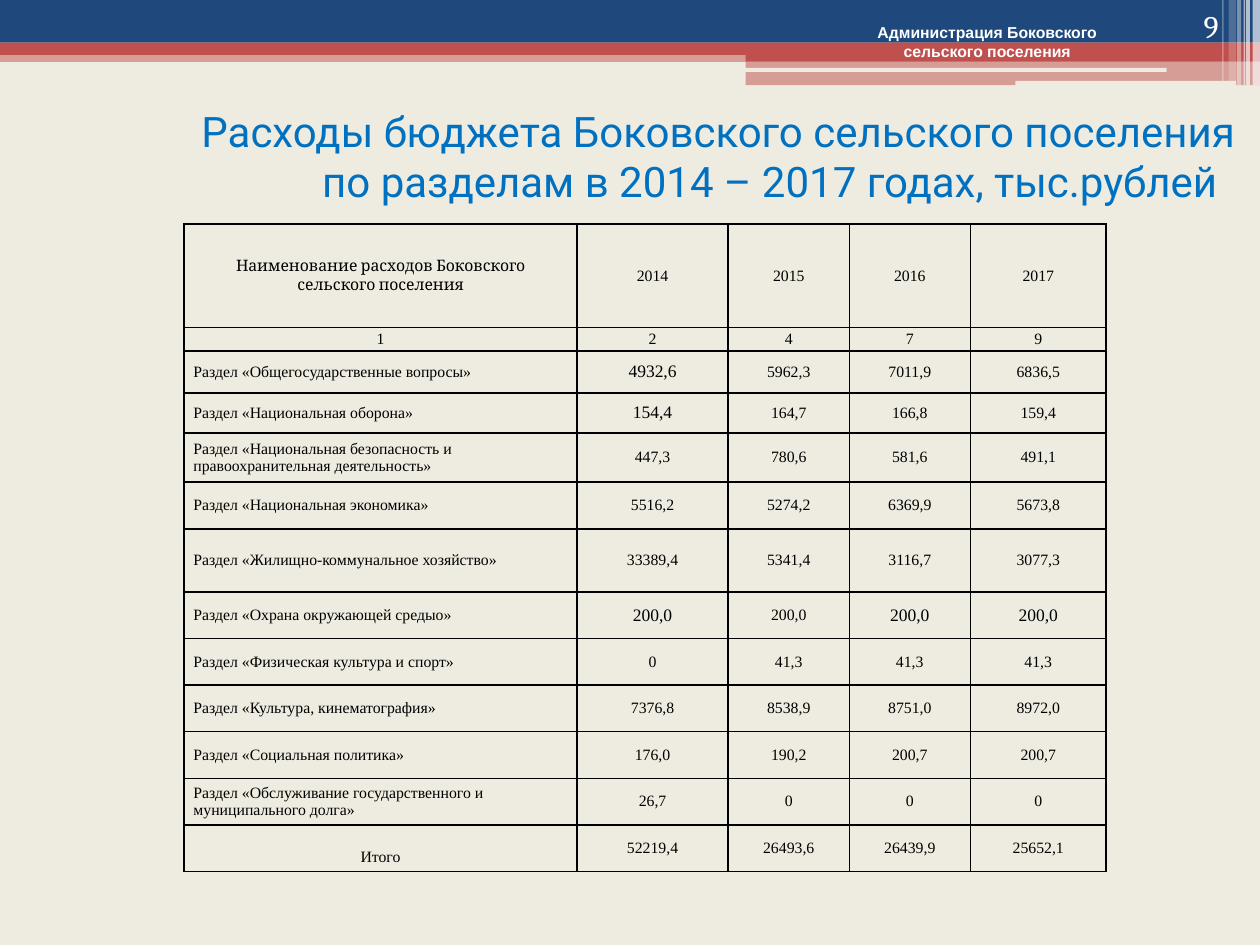
from typing import NamedTuple

from lxml.etree import SubElement
from pptx import Presentation
from pptx.dml.color import RGBColor
from pptx.enum.shapes import MSO_SHAPE
from pptx.enum.text import MSO_ANCHOR, MSO_AUTO_SIZE, PP_ALIGN
from pptx.oxml.ns import qn
from pptx.util import Cm, Pt

NAVY = RGBColor(0x1F, 0x49, 0x7D)
RED = RGBColor(0xC0, 0x50, 0x4D)
CREAM = RGBColor(0xEE, 0xEC, 0xE1)
WHITE = RGBColor(0xFF, 0xFF, 0xFF)
BLACK = RGBColor(0, 0, 0)
BLUE = RGBColor(0x00, 0x70, 0xC0)
SERIF = "Times New Roman"


class Bar(NamedTuple):
    left: float
    top: float
    width: float
    height: float
    color: RGBColor
    alpha: int = 100
    kind: MSO_SHAPE = MSO_SHAPE.RECTANGLE


class Font(NamedTuple):
    name: str
    size: int
    color: RGBColor
    bold: bool = False


ROUND = MSO_SHAPE.ROUNDED_RECTANGLE
BARS = [
    Bar(0, 1.02, 25.4, 0.23, RED, 50),
    Bar(0, 0, 25.4, 0.86, NAVY),
    Bar(0, 0.86, 25.4, 0.25, RED),
    Bar(15.03, 0.99, 10.37, 0.25, RED),
    Bar(15.03, 1.24, 10.37, 0.48, RED, 50),
    Bar(15.01, 1.37, 8.51, 0.08, CREAM, kind=ROUND),
    Bar(20.47, 1.63, 4.45, 0.1, CREAM, kind=ROUND),
    # Pale stripes at the right edge
    Bar(25.25, 0, 0.15, 1.72, WHITE, 65),
    Bar(25.12, 0, 0.08, 1.72, WHITE, 65),
    Bar(25.07, 0, 0.03, 1.72, WHITE, 60),
    Bar(24.94, 0, 0.08, 1.72, WHITE, 40),
    Bar(24.77, 0, 0.15, 1.63, WHITE, 20),
    Bar(24.64, 0, 0.03, 1.63, WHITE, 30),
]

# Title lines with their left indents
TITLE = [
    ("Расходы бюджета Боковского сельского поселения", 3.56),
    ("по разделам в 2014 – 2017 годах, тыс.рублей", 5.64),
]

COLS = [7.92, 3.05, 2.44, 2.44, 2.74]
ROWS = [2.08, 0.48, 0.84, 0.81, 0.99, 0.94, 1.27] + [0.94] * 6
DATA = [
    ("Наименование расходов Боковского сельского поселения",
     "2014", "2015", "2016", "2017"),
    ("1", "2", "4", "7", "9"),
    ("Раздел «Общегосударственные вопросы»",
     "4932,6", "5962,3", "7011,9", "6836,5"),
    ("Раздел «Национальная оборона»", "154,4", "164,7", "166,8", "159,4"),
    ("Раздел «Национальная безопасность и правоохранительная деятельность»",
     "447,3", "780,6", "581,6", "491,1"),
    ("Раздел «Национальная экономика»",
     "5516,2", "5274,2", "6369,9", "5673,8"),
    ("Раздел «Жилищно-коммунальное хозяйство»",
     "33389,4", "5341,4", "3116,7", "3077,3"),
    ("Раздел «Охрана окружающей средыо»",
     "200,0", "200,0", "200,0", "200,0"),
    ("Раздел «Физическая культура и спорт»", "0", "41,3", "41,3", "41,3"),
    ("Раздел «Культура, кинематография»",
     "7376,8", "8538,9", "8751,0", "8972,0"),
    ("Раздел «Социальная политика»", "176,0", "190,2", "200,7", "200,7"),
    ("Раздел «Обслуживание государственного и муниципального долга»",
     "26,7", "0", "0", "0"),
    ("Итого", "52219,4", "26493,6", "26439,9", "25652,1"),
]
LAST = len(DATA) - 1
LARGE = {(2, 1), (3, 1), (7, 1), (7, 3), (7, 4)}


def add_run(para, text: str, font: Font, align=PP_ALIGN.CENTER) -> None:
    para.alignment = align
    run = para.add_run()
    run.text = text
    run.font.name = font.name
    run.font.size = Pt(font.size)
    run.font.bold = font.bold
    run.font.color.rgb = font.color


def add_bar(slide, bar: Bar) -> None:
    shape = slide.shapes.add_shape(
        bar.kind, Cm(bar.left), Cm(bar.top), Cm(bar.width), Cm(bar.height))
    shape.shadow.inherit = False
    shape.fill.solid()
    shape.fill.fore_color.rgb = bar.color
    if bar.alpha < 100:
        color = shape.element.spPr.find(".//" + qn("a:srgbClr"))
        SubElement(color, qn("a:alpha")).set("val", str(bar.alpha * 1000))
    shape.line.fill.background()


def add_title(slide) -> None:
    title = slide.shapes.title
    title.left, title.top = Cm(0), Cm(2.13)
    title.width, title.height = Cm(25.4), Cm(2.01)
    frame = title.text_frame
    frame.auto_size = MSO_AUTO_SIZE.NONE
    frame.vertical_anchor = MSO_ANCHOR.MIDDLE
    for i, (text, indent) in enumerate(TITLE):
        para = frame.add_paragraph() if i else frame.paragraphs[0]
        add_run(para, text, Font("Roboto", 24, BLUE))
        para._p.get_or_add_pPr().set("marL", str(Cm(indent)))


def add_label(slide, left: float, top: float, width: float, lines: list[str],
              font: Font, align, anchor) -> None:
    box = slide.shapes.add_textbox(Cm(left), Cm(top), Cm(width), Cm(1.02))
    frame = box.text_frame
    frame.word_wrap = True
    frame.vertical_anchor = anchor
    for i, text in enumerate(lines):
        para = frame.add_paragraph() if i else frame.paragraphs[0]
        add_run(para, text, font, align)


def style_cell(cell) -> None:
    cell.vertical_anchor = MSO_ANCHOR.MIDDLE
    cell.margin_left = cell.margin_right = Cm(0.19)
    cell.margin_top = cell.margin_bottom = Cm(0)
    props = cell._tc.get_or_add_tcPr()
    for side in ("lnL", "lnR", "lnT", "lnB"):
        line = SubElement(props, qn(f"a:{side}"), w=str(Pt(1)))
        fill = SubElement(line, qn("a:solidFill"))
        SubElement(fill, qn("a:srgbClr"), val=str(BLACK))
    cell.fill.background()


def add_grid(slide) -> None:
    table = slide.shapes.add_table(
        len(ROWS), len(COLS), Cm(3.71), Cm(4.52),
        Cm(sum(COLS)), Cm(sum(ROWS))).table
    table.first_row = table.horz_banding = False
    for col, width in zip(table.columns, COLS):
        col.width = Cm(width)
    for r, (height, texts) in enumerate(zip(ROWS, DATA)):
        table.rows[r].height = Cm(height)
        for c, text in enumerate(texts):
            cell = table.cell(r, c)
            style_cell(cell)
            name = "Cambria" if (r, c) == (0, 0) else SERIF
            size = 10 if (r, c) in LARGE else 9
            left = c == 0 and 1 < r < LAST
            add_run(cell.text_frame.paragraphs[0], text,
                    Font(name, size, BLACK),
                    PP_ALIGN.LEFT if left else PP_ALIGN.CENTER)
    # Heading wraps early, total label sits low
    head = table.cell(0, 0)
    head.margin_left = head.margin_right = Cm(0.7)
    table.cell(LAST, 0).margin_top = Cm(0.36)


def main() -> None:
    deck = Presentation()
    deck.slide_width, deck.slide_height = Cm(25.4), Cm(19.05)
    slide = deck.slides.add_slide(deck.slide_layouts[5])
    slide.background.fill.solid()
    slide.background.fill.fore_color.rgb = CREAM

    # Header band
    for bar in BARS:
        add_bar(slide, bar)
    add_label(slide, 15.95, 0.33, 7.9,
              ["Администрация Боковского", "сельского поселения"],
              Font("Arial", 9, WHITE, True), PP_ALIGN.CENTER, MSO_ANCHOR.TOP)
    add_label(slide, 22.71, 0, 2.11, ["9"], Font("Cambria", 18, WHITE),
              PP_ALIGN.RIGHT, MSO_ANCHOR.BOTTOM)

    # Title and budget table
    add_title(slide)
    add_grid(slide)
    deck.save("out.pptx")


if __name__ == "__main__":
    main()
